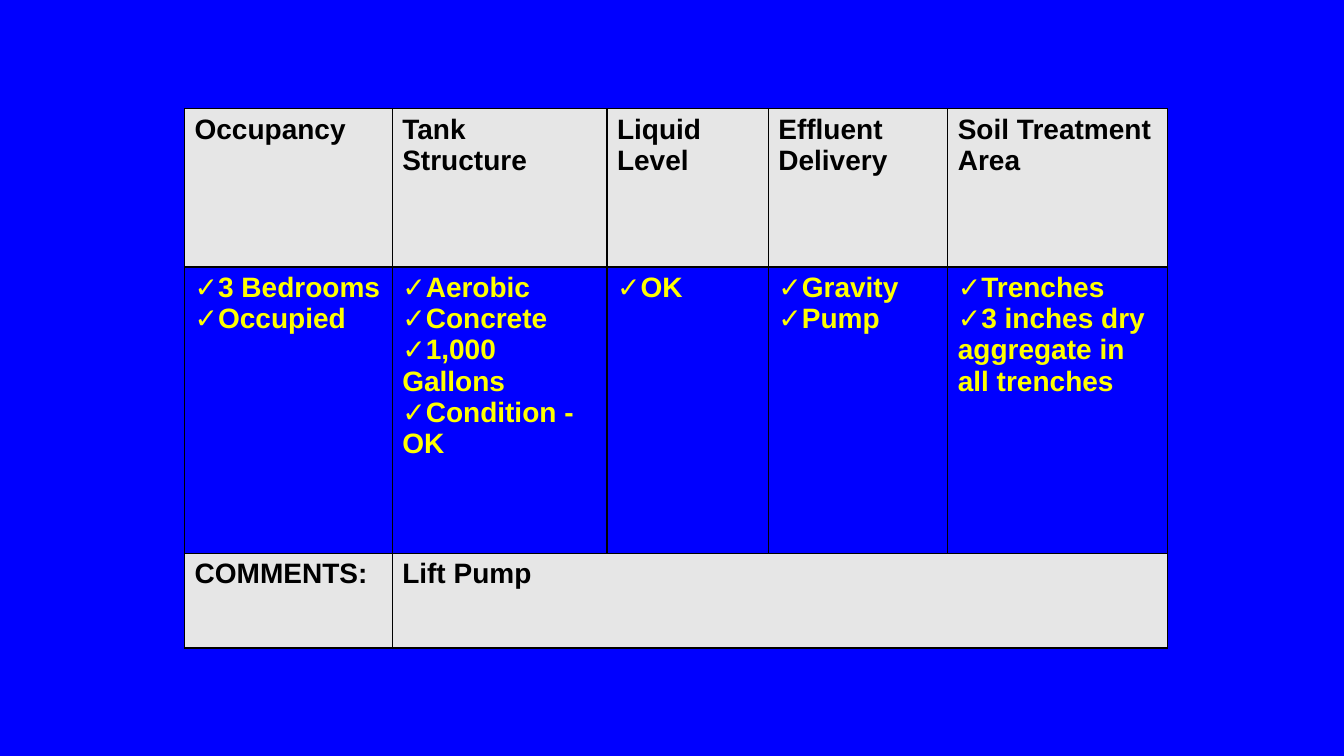
from lxml.etree import SubElement
from pptx import Presentation
from pptx.dml.color import RGBColor
from pptx.oxml.ns import qn
from pptx.util import Inches, Pt

BLUE, GREY, BLACK, YELLOW = "0000FF", "E6E6E6", "000000", "FFFF00"
HEADINGS = ["Occupancy", "Tank Structure", "Liquid Level", "Effluent Delivery", "Soil Treatment Area"]
FINDINGS = [
    ["3 Bedrooms", "Occupied"],
    ["Aerobic", "Concrete", "1,000 Gallons", "Condition - OK"],
    ["OK"],
    ["Gravity", "Pump"],
    ["Trenches", "3 inches dry aggregate in all trenches"],
]
COMMENTS = ["COMMENTS:", "Lift Pump"]
COLUMN_WIDTHS = [2.06, 2.13, 1.6, 1.78, 2.18]
ROW_HEIGHTS = [1.57, 2.84, 0.94]
LEFT, TOP = 1.83, 1.085


def color(hex_code):
    return RGBColor.from_string(hex_code)


def add_check(paragraph):
    properties = paragraph._p.get_or_add_pPr()
    properties.set("marL", "0")
    properties.set("indent", "0")
    SubElement(properties, qn("a:buFont"), typeface="Arial")
    SubElement(properties, qn("a:buChar"), char="✓")
    tabs = SubElement(properties, qn("a:tabLst"))
    SubElement(tabs, qn("a:tab"), pos=str(Inches(0.25)), algn="l")


def add_borders(cell):
    properties = cell._tc.get_or_add_tcPr()
    for position, side in enumerate(("a:lnL", "a:lnR", "a:lnT", "a:lnB")):
        border = SubElement(properties, qn(side), w=str(Pt(1)))
        fill = SubElement(border, qn("a:solidFill"))
        SubElement(fill, qn("a:srgbClr"), val=BLACK)
        properties.insert(position, border)


def fill_cell(cell, lines, text_color, checked):
    cell.text_frame.text = "\n".join(lines)
    for paragraph in cell.text_frame.paragraphs:
        if checked:
            add_check(paragraph)
        font = paragraph.runs[0].font
        font.name, font.size, font.bold = "Arial", Pt(20), True
        font.color.rgb = color(text_color)


presentation = Presentation()
presentation.slide_width, presentation.slide_height = Inches(13.33), Inches(7.5)
slide = presentation.slides.add_slide(presentation.slide_layouts[6])
slide.background.fill.solid()
slide.background.fill.fore_color.rgb = color(BLUE)

inspection = slide.shapes.add_table(
    len(ROW_HEIGHTS), len(COLUMN_WIDTHS), Inches(LEFT), Inches(round(TOP, 2)),
    Inches(sum(COLUMN_WIDTHS)), Inches(sum(ROW_HEIGHTS))).table
inspection.first_row = inspection.horz_banding = False
for column, width in zip(inspection.columns, COLUMN_WIDTHS):
    column.width = Inches(width)
for row, height in zip(inspection.rows, ROW_HEIGHTS):
    row.height = Inches(height)

contents = [[[heading] for heading in HEADINGS], FINDINGS, [[comment] for comment in COMMENTS]]
for row_index, row in enumerate(inspection.rows):
    is_findings = row_index == 1
    for cell in row.cells:
        if is_findings:
            cell.fill.background()
        else:
            cell.fill.solid()
            cell.fill.fore_color.rgb = color(GREY)
        add_borders(cell)
    for cell, lines in zip(row.cells, contents[row_index]):
        fill_cell(cell, lines, YELLOW if is_findings else BLACK, is_findings)
inspection.cell(2, 1).merge(inspection.cell(2, 4))

presentation.save("out.pptx")
